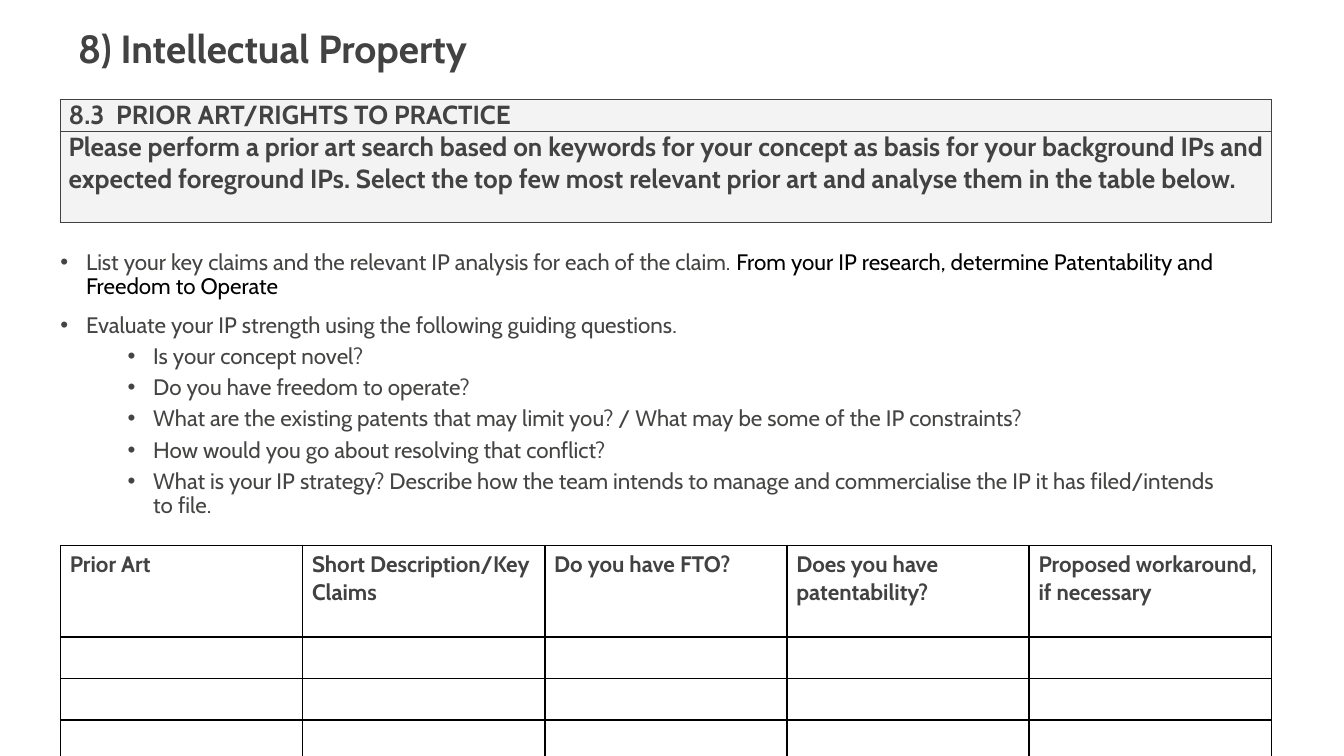
from dataclasses import dataclass
from lxml.etree import SubElement
from pptx import Presentation
from pptx.dml.color import RGBColor
from pptx.enum.text import MSO_ANCHOR, MSO_AUTO_SIZE, PP_ALIGN
from pptx.oxml.ns import qn
from pptx.util import Inches, Pt

FONT = "Cabin"
DARK = "424242"
BODY = "444443"
BLACK = "000000"


@dataclass
class Grid:
    left: float
    top: float
    width: float
    row_heights: list[float]
    rows: list[list[str]]
    size: float
    fill: str
    border: str
    inset_left: float
    inset_right: float
    inset_y: float


@dataclass
class Bullet:
    runs: list[tuple[str, str]]
    level: int = 0


def color(value: str) -> RGBColor:
    return RGBColor.from_string(value)


def write(paragraph, text: str, *, size: float, fill: str = DARK, bold: bool = False) -> None:
    run = paragraph.add_run()
    run.text = text
    run.font.name = FONT
    run.font.size = Pt(size)
    run.font.bold = bold
    run.font.color.rgb = color(fill)


def place(shape, left: float, top: float, width: float, height: float) -> None:
    shape.left, shape.top = Inches(left), Inches(top)
    shape.width, shape.height = Inches(width), Inches(height)


def set_borders(cell, border: str) -> None:
    properties = cell._tc.get_or_add_tcPr()
    for index, side in enumerate(("lnL", "lnR", "lnT", "lnB")):
        line = SubElement(properties, qn(f"a:{side}"), w=str(Pt(1)))
        SubElement(SubElement(line, qn("a:solidFill")), qn("a:srgbClr"), val=border)
        properties.insert(index, line)


def draw_grid(slide, grid: Grid):
    columns = len(grid.rows[0])
    table = slide.shapes.add_table(
        len(grid.rows), columns, Inches(grid.left), Inches(grid.top),
        Inches(grid.width), Inches(sum(grid.row_heights)),
    ).table
    table.first_row = table.horz_banding = False
    for column in table.columns:
        column.width = Inches(grid.width / columns)
    for r, (height, texts) in enumerate(zip(grid.row_heights, grid.rows)):
        table.rows[r].height = Inches(height)
        for c, text in enumerate(texts):
            cell = table.cell(r, c)
            cell.margin_left = Inches(grid.inset_left)
            cell.margin_right = Inches(grid.inset_right)
            cell.margin_top = cell.margin_bottom = Inches(grid.inset_y)
            cell.fill.solid()
            cell.fill.fore_color.rgb = color(grid.fill)
            set_borders(cell, grid.border)
            paragraph = cell.text_frame.paragraphs[0]
            if text:
                write(paragraph, text, size=grid.size, bold=True)
            else:
                SubElement(paragraph._p, qn("a:endParaRPr"), sz=str(grid.size * 100))
    return table


def draw_bullets(frame, bullets: list[Bullet]) -> None:
    for index, bullet in enumerate(bullets):
        paragraph = frame.paragraphs[0] if index == 0 else frame.add_paragraph()
        paragraph.level = bullet.level
        paragraph.line_spacing = 0.9
        paragraph.space_before = Pt(3.8 if bullet.level else 7.5)
        paragraph.space_after = Pt(0)
        properties = paragraph._p.get_or_add_pPr()
        properties.set("marL", str(Inches(0.19 + 0.5 * bullet.level)))
        properties.set("indent", str(Inches(-0.19)))
        SubElement(properties, qn("a:buFont"), typeface="Arial")
        SubElement(properties, qn("a:buChar"), char="•")
        for text, fill in bullet.runs:
            write(paragraph, text, size=12, fill=fill)


def main() -> None:
    presentation = Presentation()
    presentation.slide_width = Inches(10)
    presentation.slide_height = Inches(10 * 9 / 16)
    slide = presentation.slides.add_slide(presentation.slide_layouts[1])

    title, guidance = slide.placeholders
    place(title, 0.48, 0.13, 5.17, 0.45)
    place(guidance, 0.35, 1.82, 8.82, 3.04)
    for placeholder in (title, guidance):
        placeholder.text_frame.word_wrap = True
        placeholder.text_frame.auto_size = MSO_AUTO_SIZE.NONE
        placeholder.text_frame.vertical_anchor = MSO_ANCHOR.TOP
    heading = title.text_frame.paragraphs[0]
    heading.alignment = PP_ALIGN.LEFT
    write(heading, "8) Intellectual Property", size=21, bold=True)

    questions = [
        "Is your concept novel?",
        "Do you have freedom to operate?",
        "What are the existing patents that may limit you? / What may be some of the IP constraints?",
        "How would you go about resolving that conflict?",
        "What is your IP strategy? Describe how the team intends to manage and commercialise "
        "the IP it has filed/intends to file.",
    ]
    draw_bullets(guidance.text_frame, [
        Bullet([
            ("List your key claims and the relevant IP analysis for each of the claim.", BODY),
            (" From your IP research, determine Patentability and Freedom to Operate", BLACK),
        ]),
        Bullet([("Evaluate your IP strength using the following guiding questions.", BODY)]),
        *(Bullet([(question, BODY)], level=1) for question in questions),
    ])

    prior_art_headers = [
        "Prior Art", "Short Description/Key Claims", "Do you have FTO?",
        "Does you have patentability?", "Proposed workaround, if necessary",
    ]
    draw_grid(slide, Grid(
        0.45, 4.06, 9.01, [0.68] + [0.31] * 3,
        [prior_art_headers] + [[""] * len(prior_art_headers)] * 3,
        size=12, fill="FFFFFF", border=BLACK,
        inset_left=0.07, inset_right=0.07, inset_y=0.04,
    ))
    instructions = draw_grid(slide, Grid(
        0.45, 0.74, 9.01, [0.23, 0.68],
        [
            ["8.3  PRIOR ART/RIGHTS TO PRACTICE"],
            ["Please perform a prior art search based on keywords for your concept as basis for "
             "your background IPs and expected foreground IPs. Select the top few most relevant "
             "prior art and analyse them in the table below."],
        ],
        size=14, fill="F3F3F3", border=DARK,
        inset_left=0.06, inset_right=0.04, inset_y=0,
    ))
    instructions.cell(0, 0).text_frame.paragraphs[0].alignment = PP_ALIGN.JUSTIFY

    presentation.save("out.pptx")


if __name__ == "__main__":
    main()
